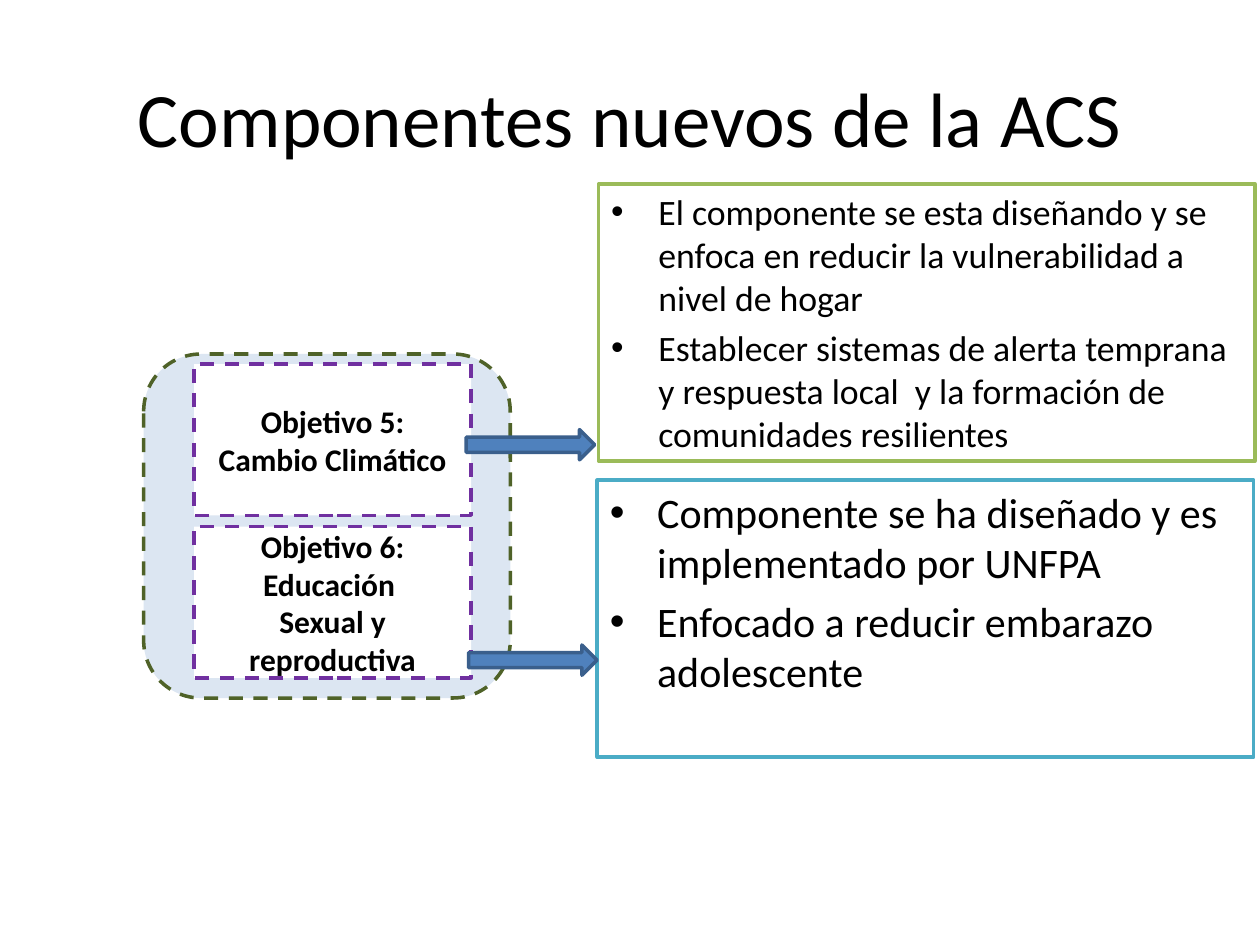
"""Build the slide on the new components of the ACS."""
from pptx import Presentation
from pptx import util as u
from pptx.dml.color import RGBColor
from pptx.enum import dml, shapes, text

COLOURS = {
    "ink": "000000", "paper": "FFFFFF", "panel": "DCE6F2", "panel_edge": "4F6228",
    "goal_edge": "7030A0", "climate": "9BBB59", "education": "4BACC6",
    "arrow": "4F81BD", "arrow_edge": "3A5F8C",
}


def colour(name):
    return RGBColor.from_string(COLOURS[name])


def place(box, left, top, width, height):
    box.left, box.top = u.Pt(left), u.Pt(top)
    box.width, box.height = u.Pt(width), u.Pt(height)


def paint(box, fill, edge, dashed=False):
    box.fill.solid()
    box.fill.fore_color.rgb = colour(fill)
    box.line.color.rgb = colour(edge)
    box.line.width = u.Pt(2)
    if dashed:
        box.line.dash_style = dml.MSO_LINE.DASH


def write(box, words, size, bold=False, align=None, anchor=text.MSO_ANCHOR.TOP):
    frame = box.text_frame
    frame.text = words
    frame.word_wrap = True
    frame.auto_size = text.MSO_AUTO_SIZE.NONE
    frame.vertical_anchor = anchor
    for para in frame.paragraphs:
        para.alignment = align
        for span in para.runs:
            span.font.name = "Calibri"
            span.font.size = u.Pt(size)
            span.font.bold = bold
            span.font.color.rgb = colour("ink")


def add_block(page, kind, area, fill, edge, dashed=False):
    box = page.shapes.add_shape(kind, *(u.Pt(length) for length in area))
    box.shadow.inherit = False
    paint(box, fill, edge, dashed)
    return box


def add_goal(page, top, words):
    box = add_block(page, shapes.MSO_SHAPE.RECTANGLE, (110.9, top, 158.4, 86.4),
                    "paper", "goal_edge", dashed=True)
    write(box, words, 18, bold=True, align=text.PP_ALIGN.CENTER,
          anchor=text.MSO_ANCHOR.MIDDLE)


def add_arrow(page, left, top):
    add_block(page, shapes.MSO_SHAPE.RIGHT_ARROW, (left, top, 73.4, 17.3),
              "arrow", "arrow_edge")


def fill_list(box, left, top, edge, items, size):
    place(box, left, top, 375.1, 158.4)
    paint(box, "paper", edge)
    write(box, "\n".join(items), size)


def main():
    deck = Presentation()
    deck.slide_width, deck.slide_height = u.Pt(720), u.Pt(540)
    page = deck.slides.add_slide(deck.slide_layouts.get_by_name("Two Content"))
    title, climate, education = list(page.placeholders)[:3]

    place(title, 36, 21.6, 648, 90)
    write(title, "Componentes nuevos de la ACS", 44,
          align=text.PP_ALIGN.CENTER, anchor=text.MSO_ANCHOR.MIDDLE)
    fill_list(climate, 342, 105.1, "climate", [
        "El componente se esta diseñando y se enfoca en reducir la vulnerabilidad a nivel de hogar",
        "Establecer sistemas de alerta temprana y respuesta local  y la formación de comunidades resilientes",
    ], size=20.4)
    fill_list(education, 341.3, 274.3, "education", [
        "Componente se ha diseñado y es implementado por UNFPA",
        "Enfocado a reducir embarazo adolescente",
    ], size=24)

    add_block(page, shapes.MSO_SHAPE.ROUNDED_RECTANGLE, (82.1, 202.3, 209.5, 196.6),
              "panel", "panel_edge", dashed=True)
    add_goal(page, 208.1, "Objetivo 5:\nCambio Climático")
    add_goal(page, 301, "Objetivo 6:\nEducación \nSexual y reproductiva")
    add_arrow(page, 266.4, 245.5)
    add_arrow(page, 267.8, 368.6)
    deck.save("out.pptx")


if __name__ == "__main__":
    main()
